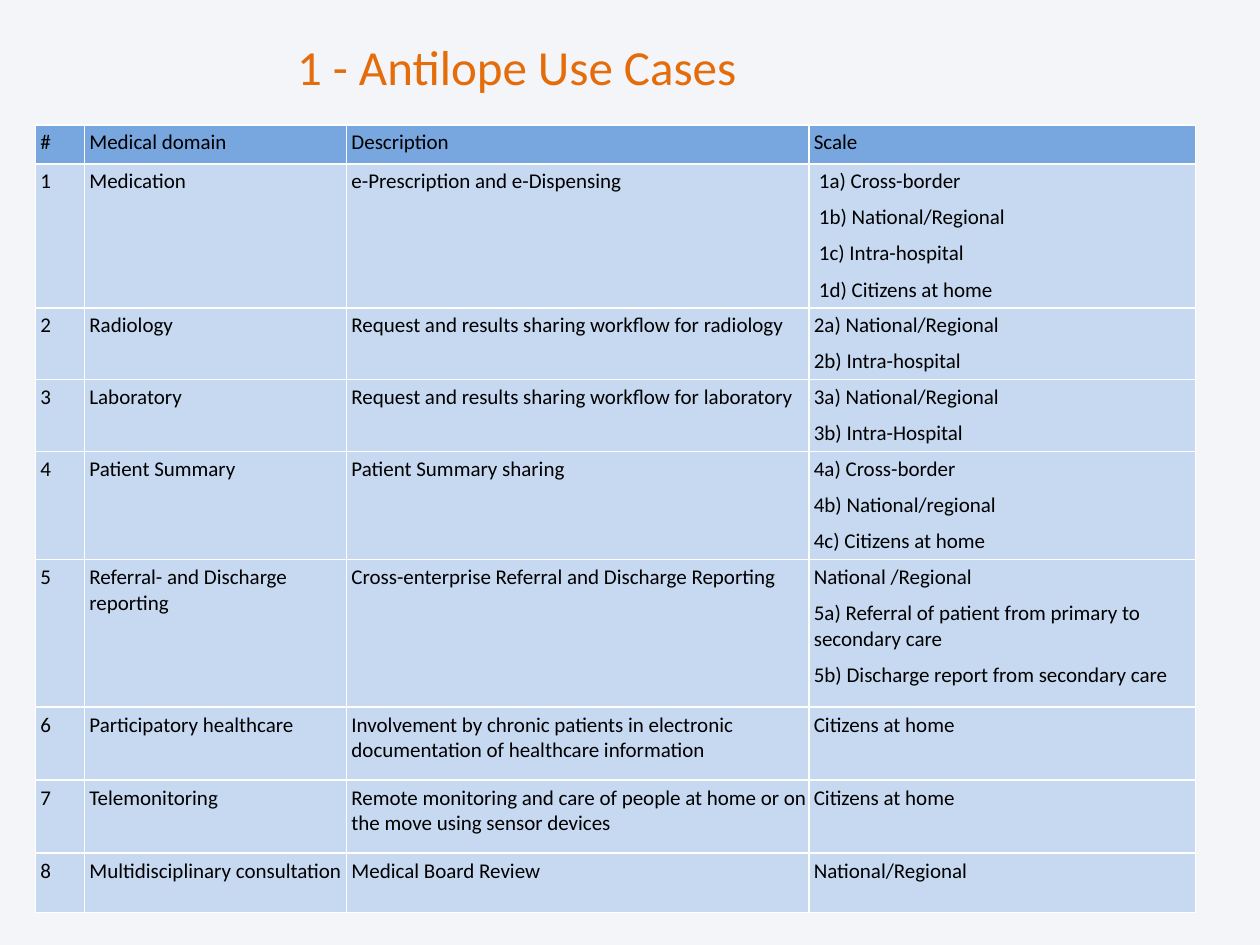
from pptx import Presentation
from pptx.dml.color import RGBColor
from pptx.enum.text import MSO_ANCHOR, PP_ALIGN
from pptx.oxml import parse_xml
from pptx.oxml.ns import nsdecls
from pptx.util import Inches, Pt

MIDDLE, TOP = MSO_ANCHOR.MIDDLE, MSO_ANCHOR.TOP
CENTER, LEFT = PP_ALIGN.CENTER, PP_ALIGN.LEFT
TITLE_ONLY = 5

COLOURS = {"background": "F3F5F9", "title": "E46C0A", "text": "000000",
           "header": "78A6DE", "body": "C6D9F1", "border": "FFFFFF"}
FONT = "Calibri"

# Content
TITLE = "1 - Antilope Use Cases"
HEADER = ("#", "Medical domain", "Description", "Scale")
USE_CASES = [
    ("Medication", "e-Prescription and e-Dispensing",
     ["1a) Cross-border", "1b) National/Regional", "1c) Intra-hospital", "1d) Citizens at home"]),
    ("Radiology", "Request and results sharing workflow for radiology",
     ["2a) National/Regional", "2b) Intra-hospital"]),
    ("Laboratory", "Request and results sharing workflow for laboratory",
     ["3a) National/Regional", "3b) Intra-Hospital"]),
    ("Patient Summary", "Patient Summary sharing",
     ["4a) Cross-border", "4b) National/regional", "4c) Citizens at home"]),
    ("Referral- and Discharge reporting", "Cross-enterprise Referral and Discharge Reporting",
     ["National /Regional", "5a) Referral of patient from primary to secondary care",
      "5b) Discharge report from secondary care"]),
    ("Participatory healthcare",
     "Involvement by chronic patients in electronic documentation of healthcare information",
     ["Citizens at home"]),
    ("Telemonitoring",
     "Remote monitoring and care of people at home or on the move using sensor devices",
     ["Citizens at home"]),
    ("Multidisciplinary consultation", "Medical Board Review", ["National/Regional"]),
]
COLUMN_WIDTHS = (0.39, 2.08, 3.67, 3.07)
ROW_HEIGHTS = (0.31, 1.14, 0.57, 0.57, 0.86, 1.17, 0.58, 0.58, 0.47)
CELL_FORMAT = {"margin_left": Inches(0.04), "margin_top": Inches(0.04),
               "margin_right": Inches(0.01), "margin_bottom": Inches(0.04),
               "vertical_anchor": TOP}
FIRST_SCALE_MARGIN = Inches(0.08)


def apply(target, values):
    for name, value in values.items():
        setattr(target, name, value)


def write(text_frame, lines, size, colour, alignment):
    text_frame.text = "\n".join(lines)
    for index, paragraph in enumerate(text_frame.paragraphs):
        apply(paragraph, {"alignment": alignment, "space_before": Pt(6 if index else 0)})
        for run in paragraph.runs:
            apply(run.font, {"name": FONT, "size": Pt(size), "bold": False})
            run.font.color.rgb = RGBColor.from_string(COLOURS[colour])


def add_borders(cell):
    properties = cell._tc.get_or_add_tcPr()
    for side in ("lnL", "lnR", "lnT", "lnB"):
        properties.append(parse_xml(
            f'<a:{side} {nsdecls("a")} w="{Pt(1)}"><a:solidFill>'
            f'<a:srgbClr val="{COLOURS["border"]}"/></a:solidFill></a:{side}>'))


presentation = Presentation()
apply(presentation, {"slide_width": Inches(10), "slide_height": Inches(7.5)})
slide = presentation.slides.add_slide(presentation.slide_layouts[TITLE_ONLY])
background = slide.background.fill
background.solid()
background.fore_color.rgb = RGBColor.from_string(COLOURS["background"])

# Title
title = slide.shapes.title
apply(title, {"left": Inches(1.58), "top": Inches(0.21),
              "width": Inches(5.04), "height": Inches(0.63)})
apply(title.text_frame, {"vertical_anchor": MIDDLE, "word_wrap": True})
write(title.text_frame, [TITLE], 28, "title", CENTER)

# Use case table
rows = [[[label] for label in HEADER]]
for number, (domain, description, scales) in enumerate(USE_CASES, 1):
    rows.append([[str(number)], [domain], [description], scales])

table = slide.shapes.add_table(
    len(rows), len(HEADER), Inches(0.28), Inches(0.99),
    Inches(sum(COLUMN_WIDTHS)), Inches(sum(ROW_HEIGHTS))).table
for column, width in zip(table.columns, COLUMN_WIDTHS):
    column.width = Inches(width)
for row, height in zip(table.rows, ROW_HEIGHTS):
    row.height = Inches(height)

for row_index, row in enumerate(rows):
    for column_index, lines in enumerate(row):
        cell = table.cell(row_index, column_index)
        apply(cell, CELL_FORMAT)
        add_borders(cell)
        cell.fill.solid()
        cell.fill.fore_color.rgb = RGBColor.from_string(
            COLOURS["body" if row_index else "header"])
        write(cell.text_frame, lines, 12, "text", LEFT)
# The scales of the first use case are set in slightly
table.cell(1, 3).margin_left = FIRST_SCALE_MARGIN

presentation.save("out.pptx")
